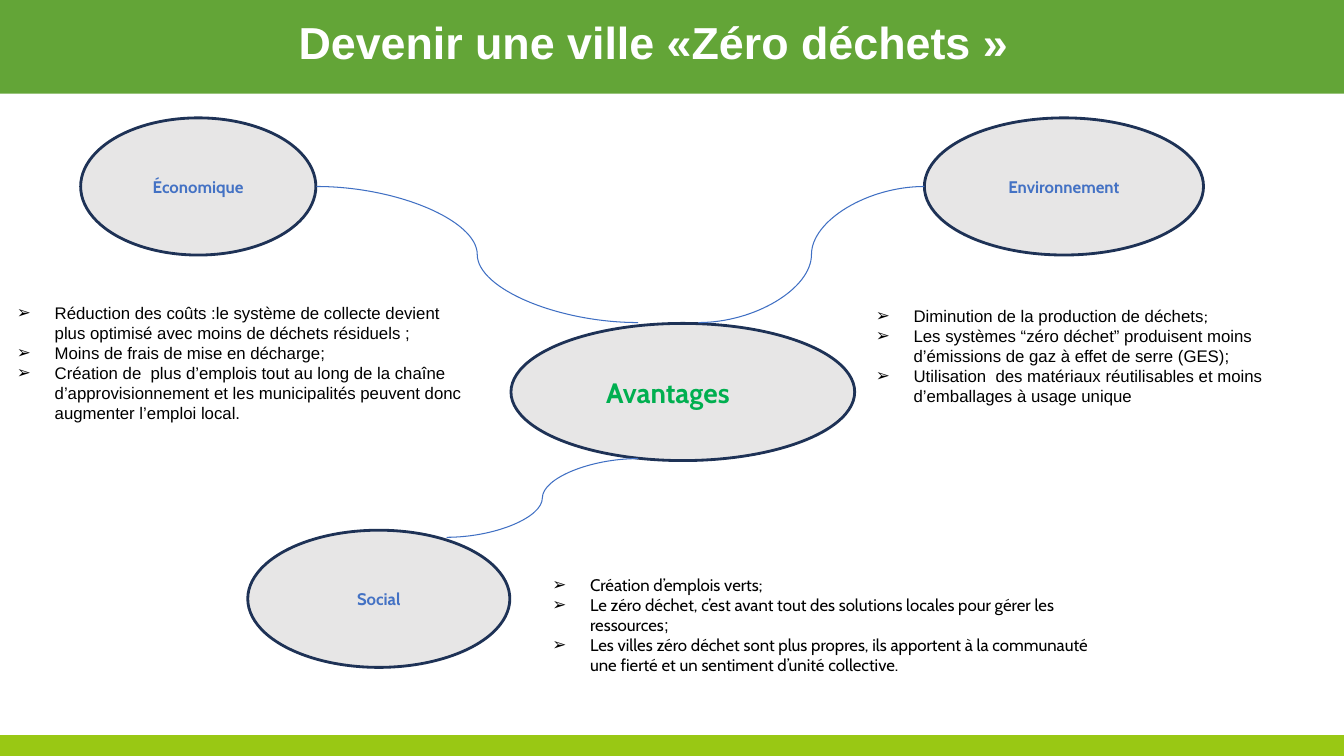
from lxml import etree
from pptx import Presentation
from pptx.dml.color import RGBColor
from pptx.enum.shapes import MSO_CONNECTOR, MSO_SHAPE
from pptx.enum.text import MSO_ANCHOR, PP_ALIGN
from pptx.oxml.ns import qn
from pptx.util import Pt

RECTANGLE, ELLIPSE = MSO_SHAPE.RECTANGLE, MSO_SHAPE.OVAL
CURVE = MSO_CONNECTOR.CURVE
LEFT, CENTER = PP_ALIGN.LEFT, PP_ALIGN.CENTER
MIDDLE = MSO_ANCHOR.MIDDLE

# Content
SLIDE_WIDTH, SLIDE_HEIGHT = 960, 540
TITLE = "Devenir une ville «Zéro déchets »"
TITLE_BOX = (53, 11.5, 828, 51)
BANDS = [(0, 67, "63A537"), (525, 15, "99C814")]  # top, height, colour

# Text, left, top, width, size, colour, alignment, indent
ELLIPSE_HEIGHT = 98
BUBBLES = [
    ("Avantages", 365, 231, 245.5, 20, "00AF50", LEFT, 25),
    ("Social", 177, 378.7, 187.2, 12, "4472C4", CENTER, 0),
    ("Économique", 57.6, 84.2, 168, 12, "4472C4", CENTER, 0),
    ("Environnement", 660.3, 84.2, 199.4, 12, "4472C4", CENTER, 0),
]

# Box, main font, bullets; each bullet is a list of (text, other font or None)
BULLET_LISTS = [
    ((5, 212.4, 338.4, 94.3), "Arial", [
        [("Réduction des coûts :le système de collecte devient plus optimisé "
          "avec moins de déchets résiduels ;", None)],
        [("Moins de frais de mise en décharge;", None)],
        [("Création de  plus d’emplois tout au long de la chaîne "
          "d’approvisionnement et les municipalités peuvent donc "
          "augmenter l’emploi local.", None)],
    ]),
    ((618.5, 214.6, 319, 80), "Arial", [
        [("Diminution de la production de déchets", None), (";", "Cabin")],
        [("Les systèmes “zéro déchet” produisent moins d’émissions de gaz "
          "à effet de serre (GES);", None)],
        [("Utilisation  des matériaux réutilisables et moins d’emballages "
          "à usage unique", None)],
    ]),
    ((387.4, 406.8, 415.4, 80), "Cabin", [
        [("Création d’emplois verts;", None)],
        [("Le zéro déchet, c’est avant tout des solutions locales pour gérer "
          "les ressources", None), (";", "Arial")],
        [("Les villes zéro déchet sont plus propres, ils apportent à la "
          "communauté une fierté et un sentiment d’unité collective.", None)],
    ]),
]
BULLET, BULLET_INDENT = "➢", 27

# Start and end points of the curved links
LINKS = [
    (226, 133.2, 455.8, 230.4),
    (660.3, 133.2, 499, 230.4),
    (319, 383.8, 455.8, 327.6),
]


def color(value):
    return RGBColor.from_string(value)


def points(values):
    return [Pt(value) for value in values]


def set_font(paragraph, name, size, value, bold=False):
    font = paragraph.font
    font.name, font.size, font.bold = name, Pt(size), bold
    font.color.rgb = color(value)


def add_shape(kind, box, fill, line=None):
    shape = slide.shapes.add_shape(kind, *points(box))
    shape.shadow.inherit = False
    shape.fill.solid()
    shape.fill.fore_color.rgb = color(fill)
    if line:
        shape.line.color.rgb = color(line)
        shape.line.width = Pt(2)
    else:
        shape.line.fill.background()
    return shape


def add_text_frame(box):
    frame = slide.shapes.add_textbox(*points(box)).text_frame
    frame.word_wrap = True
    return frame


def set_indent(paragraph, left, first=0):
    properties = paragraph._p.get_or_add_pPr()
    properties.set("marL", str(Pt(left)))
    properties.set("indent", str(Pt(first)))
    return properties


def add_bullet(paragraph):
    properties = set_indent(paragraph, BULLET_INDENT, -BULLET_INDENT)
    bullet_color = etree.SubElement(properties, qn("a:buClr"))
    etree.SubElement(bullet_color, qn("a:srgbClr"), val="000000")
    etree.SubElement(properties, qn("a:buFont"), typeface="Arial")
    etree.SubElement(properties, qn("a:buChar"), char=BULLET)


presentation = Presentation()
presentation.slide_width, presentation.slide_height = Pt(SLIDE_WIDTH), Pt(SLIDE_HEIGHT)
slide = presentation.slides.add_slide(presentation.slide_layouts[6])

# Bands and title
for top, height, fill in BANDS:
    add_shape(RECTANGLE, (0, top, SLIDE_WIDTH, height), fill)

paragraph = add_text_frame(TITLE_BOX).paragraphs[0]
paragraph.text = TITLE
paragraph.alignment = CENTER
paragraph.line_spacing = 0.9
set_font(paragraph, "Arial", 32, "FFFFFF", bold=True)

# Ellipses
for text, left, top, width, size, text_color, alignment, indent in BUBBLES:
    ellipse = add_shape(ELLIPSE, (left, top, width, ELLIPSE_HEIGHT), "E7E6E6", "1E3256")
    ellipse.text_frame.vertical_anchor = MIDDLE
    paragraph = ellipse.text_frame.paragraphs[0]
    paragraph.text = text
    paragraph.alignment = alignment
    set_indent(paragraph, indent)
    set_font(paragraph, "Cabin", size, text_color, bold=True)

# Bullet lists
for box, font_name, bullets in BULLET_LISTS:
    frame = add_text_frame(box)
    for index, runs in enumerate(bullets):
        paragraph = frame.add_paragraph() if index else frame.paragraphs[0]
        add_bullet(paragraph)
        set_font(paragraph, font_name, 12, "000000")
        for text, other_font in runs:
            run = paragraph.add_run()
            run.text = text
            if other_font:
                run.font.name = other_font

# Curved links
for ends in LINKS:
    link = slide.shapes.add_connector(CURVE, *points(ends))
    link.line.color.rgb = color("3F6FC3")
    link.line.width = Pt(0.75)
    etree.SubElement(link._element.spPr, qn("a:effectLst"))

presentation.save("out.pptx")
